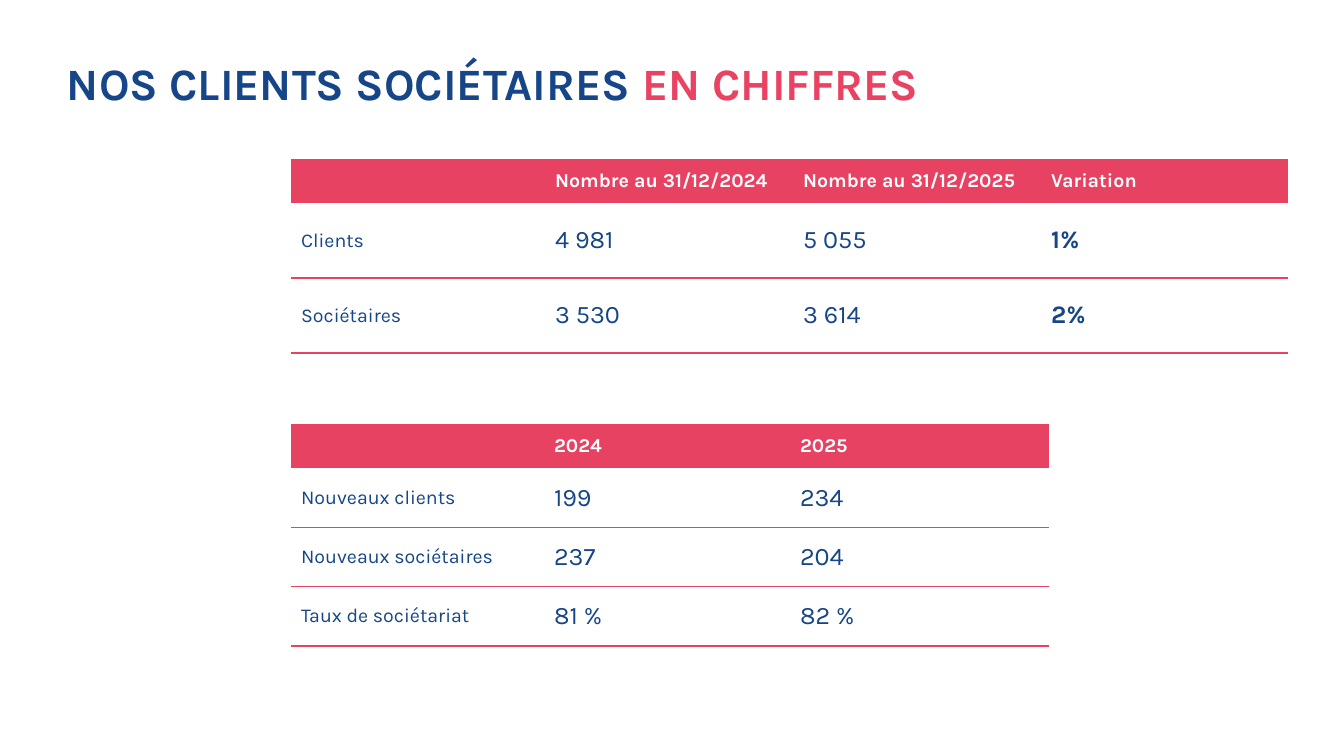
from dataclasses import dataclass

from lxml.etree import SubElement
from pptx import Presentation
from pptx.dml.color import RGBColor
from pptx.enum.text import MSO_ANCHOR
from pptx.oxml import parse_xml
from pptx.oxml.ns import nsdecls, qn
from pptx.util import Emu, Pt

EMU_PER_PX = 914400 / 100.8
NO_GRID_STYLE = "{2D5ABB26-0587-4C30-8999-92F81FD0307C}"


@dataclass(frozen=True)
class Theme:
    font: str = "Karla"
    blue: str = "164687"
    title_pink: str = "E94262"
    table_pink: str = "E84262"
    white: str = "FFFFFF"
    title_size: int = 32
    label_size: int = 14
    value_size: int = 18
    rule_width: int = 1


THEME = Theme()


def px(length):
    return Emu(round(length * EMU_PER_PX))


def style_font(font, size, bold, color=None):
    font.name = THEME.font
    font.size = Pt(size)
    font.bold = bold
    if color:
        font.color.rgb = RGBColor.from_string(color)


def add_title(slide, box, parts):
    """Write the title as (text, colour) parts on one line."""
    frame = slide.shapes.add_textbox(*map(px, box)).text_frame
    frame.word_wrap = True
    frame.margin_top = px(10)
    paragraph = frame.paragraphs[0]
    paragraph.line_spacing = 0.9
    style_font(paragraph.font, THEME.title_size, True)
    for text, color in parts:
        run = paragraph.add_run()
        run.text = text
        run.font.color.rgb = RGBColor.from_string(color)


def add_bottom_rule(cell):
    properties = cell._tc.get_or_add_tcPr()
    line = parse_xml(f'<a:lnB {nsdecls("a")} w="{Pt(THEME.rule_width)}"/>')
    fill = SubElement(line, qn("a:solidFill"))
    SubElement(fill, qn("a:srgbClr"), val=THEME.table_pink)
    properties.insert(0, line)


def fill_cell(cell, text, is_header, is_label, is_bold):
    cell.vertical_anchor = MSO_ANCHOR.MIDDLE
    cell.text = text
    size = THEME.label_size if is_header or is_label else THEME.value_size
    color = THEME.white if is_header else THEME.blue
    style_font(cell.text_frame.paragraphs[0].font, size, is_header or is_bold, color)
    if is_header:
        cell.fill.solid()
        cell.fill.fore_color.rgb = RGBColor.from_string(THEME.table_pink)
    else:
        cell.fill.background()
        add_bottom_rule(cell)


def add_figures_table(slide, box, column_widths, rows, bold_column=None):
    """Place a header row and equal body rows in the box."""
    left, top, width, height = box
    header_height = 44
    body_height = (height - header_height) / (len(rows) - 1)
    table = slide.shapes.add_table(
        len(rows), len(column_widths), px(left), px(top), px(width), px(height)
    ).table
    table.horz_banding = False
    table._tbl.tblPr.find(qn("a:tableStyleId")).text = NO_GRID_STYLE
    for column, column_width in zip(table.columns, column_widths):
        column.width = px(column_width)
    for row_index, texts in enumerate(rows):
        is_header = row_index == 0
        table.rows[row_index].height = px(header_height if is_header else body_height)
        for column_index, text in enumerate(texts):
            fill_cell(
                table.cell(row_index, column_index),
                text,
                is_header,
                is_label=column_index == 0,
                is_bold=column_index == bold_column,
            )


def build_members_slide(presentation):
    slide = presentation.slides.add_slide(presentation.slide_layouts[6])
    add_title(
        slide,
        (57, 52, 1047, 62),
        [("NOS CLIENTS SOCIÉTAIRES ", THEME.blue), ("EN CHIFFRES", THEME.title_pink)],
    )
    add_figures_table(
        slide,
        (291, 159, 997, 194),
        (254, 248, 248, 247),
        [
            ("", "Nombre au 31/12/2024", "Nombre au 31/12/2025", "Variation"),
            ("Clients", "4 981", "5 055", "1%"),
            ("Sociétaires", "3 530", "3 614", "2%"),
        ],
        bold_column=3,
    )
    add_figures_table(
        slide,
        (291, 424, 758, 222),
        (253, 246, 259),
        [
            ("", "2024", "2025"),
            ("Nouveaux clients", "199", "234"),
            ("Nouveaux sociétaires", "237", "204"),
            ("Taux de sociétariat", "81 %", "82 %"),
        ],
    )


def main():
    presentation = Presentation()
    presentation.slide_width = px(1344)
    presentation.slide_height = px(756)
    build_members_slide(presentation)
    presentation.save("out.pptx")


if __name__ == "__main__":
    main()
